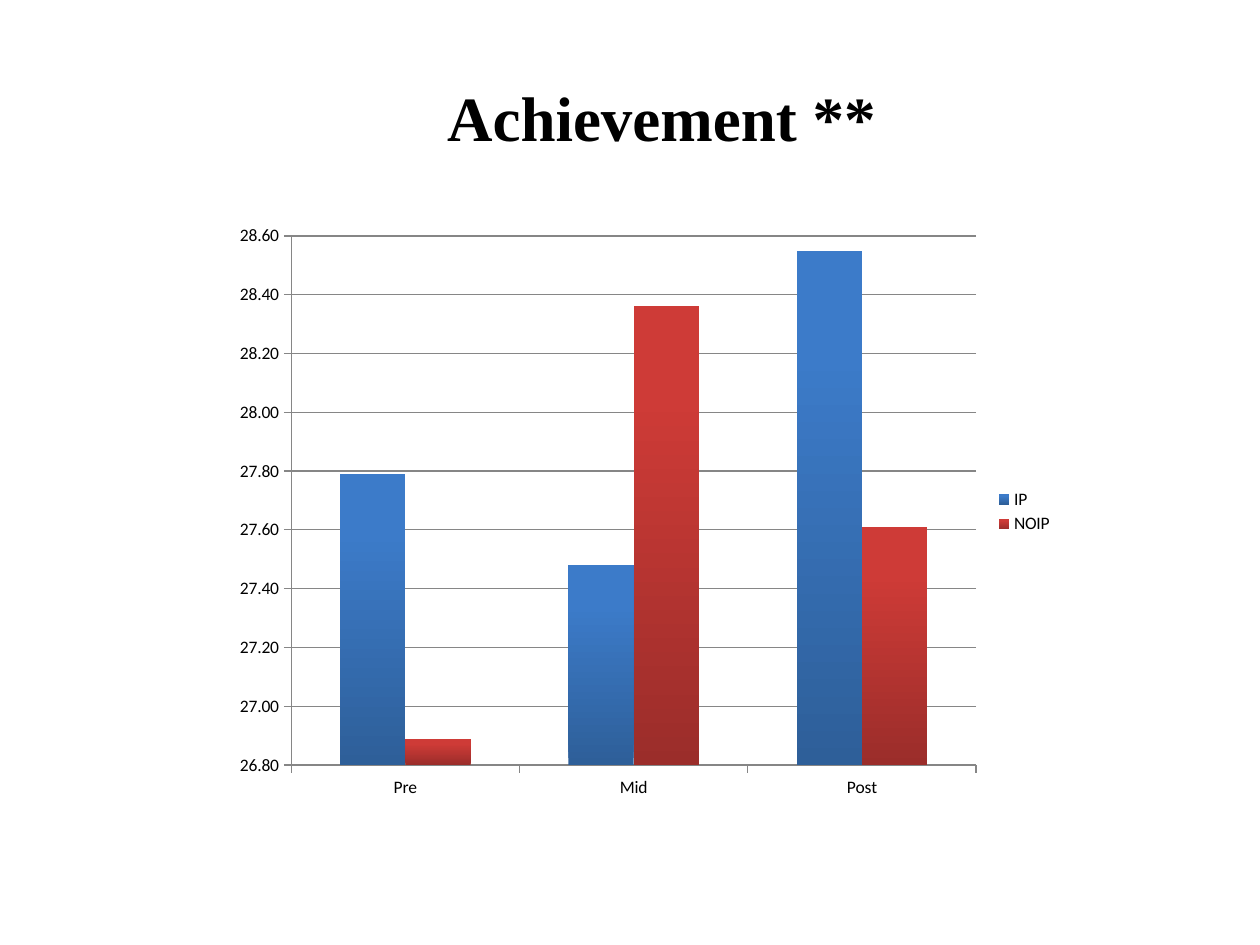
import dataclasses

import pptx
import pptx.chart.data
import pptx.dml.color
import pptx.enum.chart
import pptx.enum.text
import pptx.util

Pt = pptx.util.Pt
RGB = pptx.dml.color.RGBColor.from_string


@dataclasses.dataclass(frozen=True)
class Theme:
    text: str = "000000"
    axis: str = "868686"
    # Each bar gradient runs from its bottom colour to its top colour
    bars: tuple = (("2E5F99", "3C7BC9"), ("9B2D2A", "CE3B37"))
    title_font: str = "Times New Roman"
    chart_font: str = "Calibri"
    title_size: int = 36
    chart_size: int = 10
    line_width: float = 0.75


THEME = Theme()


def format_font(font, name, size, color, bold=False):
    font.name, font.size, font.bold = name, Pt(size), bold
    font.color.rgb = RGB(color)


def write_text(tf, text, align=pptx.enum.text.PP_ALIGN.CENTER, **fmt):
    p = tf.paragraphs[0]
    p.alignment = align
    r = p.add_run()
    r.text = text
    format_font(r.font, **fmt)


def add_title(slide, text, left, top, width, height):
    sp = slide.shapes.title
    sp.left, sp.top, sp.width, sp.height = map(Pt, (left, top, width, height))
    tf = sp.text_frame
    tf.word_wrap = True
    tf.vertical_anchor = pptx.enum.text.MSO_ANCHOR.MIDDLE
    write_text(tf, text, name=THEME.title_font, size=THEME.title_size,
               color=THEME.text, bold=True)


def format_line(line):
    line.color.rgb = RGB(THEME.axis)
    line.width = Pt(THEME.line_width)


def add_achievement_chart(slide, left, top, width, height):
    data = pptx.chart.data.CategoryChartData(number_format="###0.00")
    data.categories = ["Pre", "Mid", "Post"]
    data.add_series("IP", (27.79, 27.48, 28.55))
    data.add_series("NOIP", (26.89, 28.36, 27.61))
    chart = slide.shapes.add_chart(
        pptx.enum.chart.XL_CHART_TYPE.COLUMN_CLUSTERED,
        Pt(left), Pt(top), Pt(width), Pt(height), data).chart
    chart.has_title = False
    format_font(chart.font, THEME.chart_font, THEME.chart_size, THEME.text)

    # Legend
    chart.has_legend = True
    chart.legend.position = pptx.enum.chart.XL_LEGEND_POSITION.RIGHT
    chart.legend.include_in_layout = False

    # Axes and gridlines
    for axis in (chart.category_axis, chart.value_axis):
        axis.major_tick_mark = pptx.enum.chart.XL_TICK_MARK.OUTSIDE
        axis.minor_tick_mark = pptx.enum.chart.XL_TICK_MARK.NONE
        format_line(axis.format.line)
    values = chart.value_axis
    values.minimum_scale, values.maximum_scale = 26.8, 28.6
    values.major_unit = 0.2
    values.has_major_gridlines = True
    format_line(values.major_gridlines.format.line)
    values.tick_labels.number_format = "###0.00"
    values.tick_labels.number_format_is_linked = False

    # Bars
    plot = chart.plots[0]
    plot.gap_width, plot.overlap = 150, 0
    plot.vary_by_categories = False
    for series, colors in zip(plot.series, THEME.bars):
        series.invert_if_negative = False
        fill = series.format.fill
        fill.gradient()
        fill.gradient_angle = 90
        for stop, color, position in zip(fill.gradient_stops, colors, (0, 0.8)):
            stop.color.rgb = RGB(color)
            stop.position = position


def main():
    prs = pptx.Presentation()
    prs.slide_width, prs.slide_height = Pt(720), Pt(540)
    slide = prs.slides.add_slide(prs.slide_layouts[5])
    add_title(slide, "Achievement **", 60, 21.6, 636, 90)
    add_achievement_chart(slide, 127.5, 122.4, 481.5, 340)
    prs.save("out.pptx")


if __name__ == "__main__":
    main()
